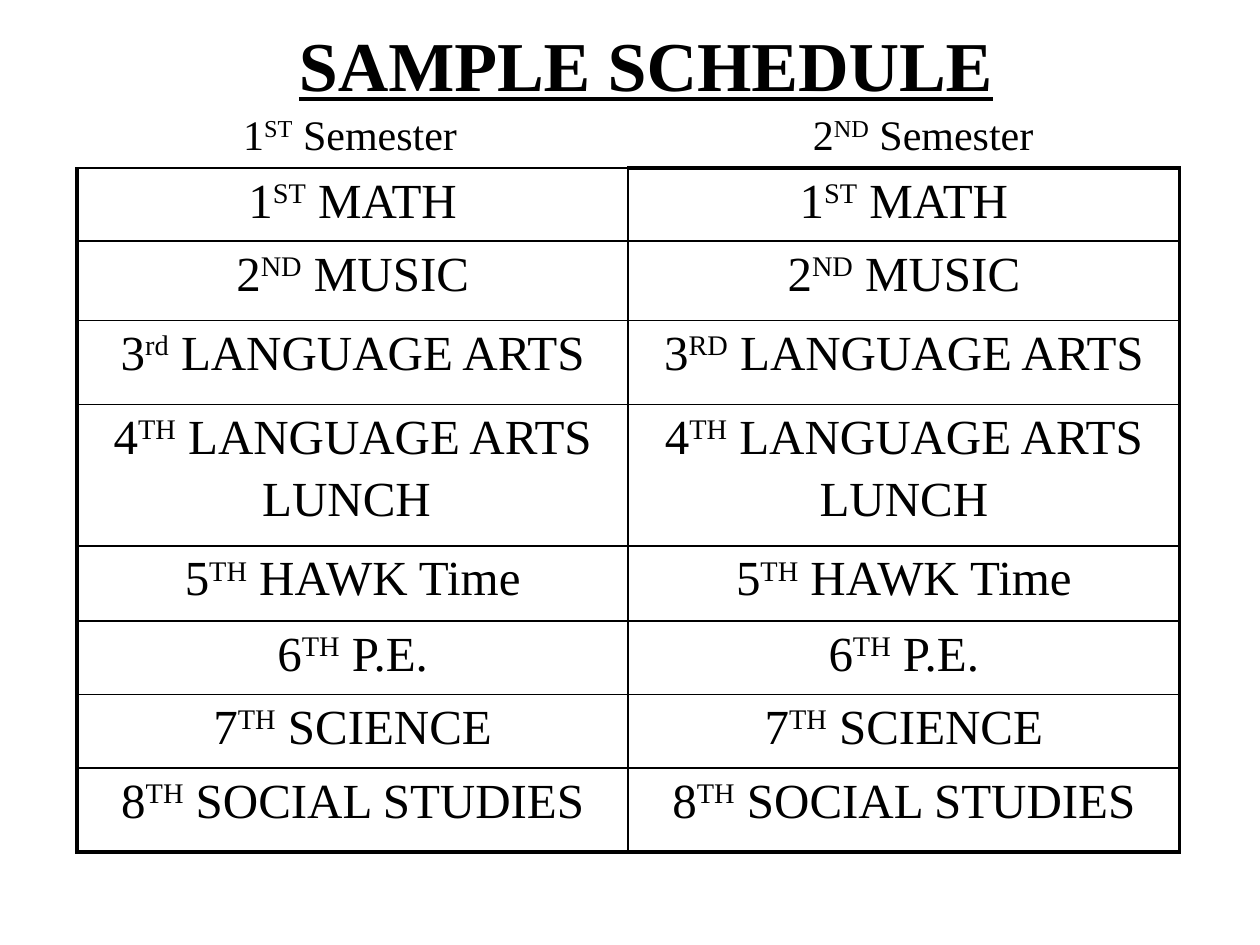
import dataclasses

import lxml.etree
import pptx
import pptx.dml.color
import pptx.enum.text
import pptx.oxml.ns
import pptx.util

Pt = pptx.util.Pt
qn = pptx.oxml.ns.qn
ALIGN = pptx.enum.text.PP_ALIGN
COLOURS = {"ink": "000000"}
FONT = "Times New Roman"
THIN, THICK = 1, 2.25


@dataclasses.dataclass(frozen=True)
class Period:
    number: str
    suffixes: tuple[str, str]
    subject: str
    height: float
    extras: tuple[str, str] = ("", "")


PERIODS = [
    Period("1", ("ST", "ST"), "MATH", 41.75),
    Period("2", ("ND", "ND"), "MUSIC", 45.5),
    Period("3", ("rd", "RD"), "LANGUAGE ARTS", 48),
    Period("4", ("TH", "TH"), "LANGUAGE ARTS", 80.75, ("LUNCH ", "LUNCH")),
    Period("5", ("TH", "TH"), "HAWK Time", 43),
    Period("6", ("TH", "TH"), "P.E.", 42),
    Period("7", ("TH", "TH"), "SCIENCE", 42),
    Period("8", ("TH", "TH"), "SOCIAL STUDIES", 48),
]


def style_paragraph(para, size: float, align=ALIGN.CENTER, before: float = 0) -> None:
    para.alignment = align
    para.space_before = Pt(before)
    para.font.size = Pt(size)
    para.font.name = FONT
    para.font.color.rgb = pptx.dml.color.RGBColor.from_string(COLOURS["ink"])


def add_ordinal(para, number: str, suffix: str, label: str) -> None:
    para.add_run().text = number
    raised = para.add_run()
    raised.text = suffix
    raised._r.get_or_add_rPr().set("baseline", "30000")
    para.add_run().text = f" {label}"


def add_text_box(page, left: float, top: float, width: float, height: float):
    box = page.shapes.add_textbox(Pt(left), Pt(top), Pt(width), Pt(height))
    box.text_frame.word_wrap = True
    return box.text_frame


def set_borders(cell, widths: dict[str, float]) -> None:
    properties = cell._tc.get_or_add_tcPr()
    for position, (side, width) in enumerate(widths.items()):
        line = lxml.etree.Element(qn(f"a:ln{side}"), w=str(int(Pt(width))))
        fill = lxml.etree.SubElement(line, qn("a:solidFill"))
        lxml.etree.SubElement(fill, qn("a:srgbClr"), val=COLOURS["ink"])
        properties.insert(position, line)


def add_title(page) -> None:
    para = add_text_box(page, 18, 18, 702, 48).paragraphs[0]
    style_paragraph(para, 40, before=5)
    para.line_spacing = 0.8
    para.font.bold = True
    para.font.underline = True
    para.add_run().text = "SAMPLE SCHEDULE"


def add_semesters(page) -> None:
    frame = add_text_box(page, 48, 58.5, 624, 36)
    frame.margin_left = Pt(91)
    para = frame.paragraphs[0]
    style_paragraph(para, 24, ALIGN.LEFT, before=3)
    properties = para._p.get_or_add_pPr()
    tabs = lxml.etree.Element(qn("a:tabLst"))
    lxml.etree.SubElement(tabs, qn("a:tab"), pos=str(int(Pt(325.5))), algn="l")
    properties.insert(list(properties).index(properties.find(qn("a:defRPr"))), tabs)
    add_ordinal(para, "1", "ST", "Semester\t")
    add_ordinal(para, "2", "ND", "Semester")


def fill_cell(cell, period: Period, column: int) -> None:
    cell.fill.background()
    para = cell.text_frame.paragraphs[0]
    style_paragraph(para, 28)
    add_ordinal(para, period.number, period.suffixes[column], period.subject)
    if period.extras[column]:
        extra = cell.text_frame.add_paragraph()
        style_paragraph(extra, 28, before=4.5)
        extra.add_run().text = period.extras[column]


def add_schedule(page) -> None:
    total = sum(period.height for period in PERIODS)
    table = page.shapes.add_table(
        len(PERIODS), 2, Pt(44), Pt(96), Pt(630), Pt(total)
    ).table
    table.first_row = False
    table.horz_banding = False
    for row, period in enumerate(PERIODS):
        table.rows[row].height = Pt(period.height)
        for column in range(2):
            cell = table.cell(row, column)
            fill_cell(cell, period, column)
            set_borders(cell, {
                "L": THICK if column == 0 else THIN,
                "R": THICK if column == 1 else THIN,
                "T": THICK if (row, column) == (0, 1) else THIN,
                "B": THICK if row == len(PERIODS) - 1 else THIN,
            })


def main() -> None:
    deck = pptx.Presentation()
    deck.slide_width, deck.slide_height = Pt(720), Pt(540)
    page = deck.slides.add_slide(deck.slide_layouts[6])
    add_title(page)
    add_schedule(page)
    add_semesters(page)
    deck.save("out.pptx")


if __name__ == "__main__":
    main()
